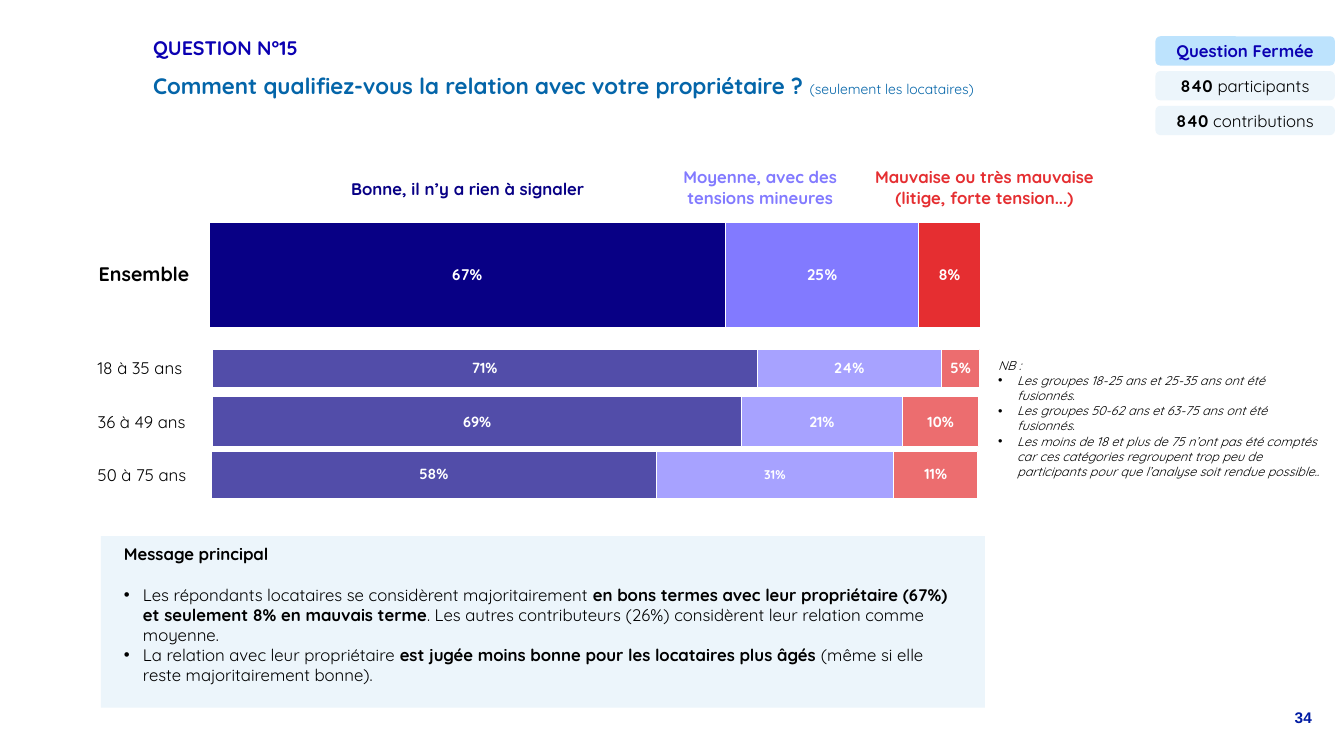
from lxml.etree import SubElement
from pptx import Presentation
from pptx.chart.data import CategoryChartData
from pptx.dml.color import RGBColor
from pptx.enum.chart import XL_CHART_TYPE
from pptx.enum.shapes import MSO_SHAPE
from pptx.enum.text import MSO_ANCHOR, MSO_AUTO_SIZE, PP_ALIGN
from pptx.oxml import parse_xml
from pptx.oxml.ns import nsdecls, qn
from pptx.util import Inches, Pt

NAVY = RGBColor(0x08, 0x00, 0x85)
VIOLET = RGBColor(0x82, 0x7A, 0xFF)
RED = RGBColor(0xE5, 0x2E, 0x31)
INDIGO = RGBColor(0x0B, 0x00, 0xB2)
BLUE = RGBColor(0x04, 0x65, 0xA9)
PAGE_BLUE = RGBColor(0x01, 0x1C, 0xA3)
PALE = RGBColor(0xEC, 0xF5, 0xFB)
SKY = RGBColor(0xBD, 0xE3, 0xFD)
BLACK = RGBColor(0, 0, 0)
WHITE = RGBColor(0xFF, 0xFF, 0xFF)
FONT = "Quicksand"

# Content: a paragraph is a list of (text, bold) runs
TITLE = [("QUESTION N°15", True)]
QUESTION = [("Comment qualifiez-vous la relation avec votre propriétaire ? ", True),
            ("(seulement les locataires)", False)]
BADGES = [
    ([("Question Fermée", True)], SKY, INDIGO),
    ([("840 ", True), ("participants", False)], PALE, BLACK),
    ([("840 ", True), ("contributions", False)], PALE, BLACK),
]
ANSWERS = [  # text, colour, box
    ("Bonne, il n’y a rien à signaler", NAVY, (3.35, 1.72, 2.58, 0.3)),
    ("Moyenne, avec des tensions mineures", VIOLET, (6.38, 1.61, 2.32, 0.5)),
    ("Mauvaise ou très mauvaise (litige, forte tension...)", RED, (8.4, 1.61, 2.73, 0.5)),
]
BARS = [  # values, label sizes, axis maximum, frame, inner plot area
    ((0.67, 0.25, 0.08), (11, 11, 11), 1, (1.91, 1.27, 8.14, 3.07), (0.02, 0.05, 0.94, 0.85)),
    ((0.71, 0.24, 0.05), (10.5, 10.5, 10.5), 1.2, (1.91, 3.03, 9.72, 1.25), (0.02, 0.12, 0.94, 0.76)),
    ((0.58, 0.31, 0.11), (10.5, 9, 10.5), 1.2, (1.91, 4.09, 9.5, 1.24), (0.02, 0.03, 0.96, 0.94)),
    ((0.69, 0.21, 0.1), (10.5, 10.5, 10.5), 1.2, (1.92, 3.53, 9.5, 1.31), (0.02, 0.03, 0.96, 0.94)),
]
ROW_LABELS = [  # text, size, bold, box
    ("Ensemble", 14, True, (0.88, 2.55, 1.12, 0.34)),
    ("18 à 35 ans", 12, False, (0.87, 3.5, 1.12, 0.3)),
    ("36 à 49 ans", 12, False, (0.87, 4.04, 1.12, 0.3)),
    ("50 à 75 ans", 12, False, (0.87, 4.56, 1.12, 0.3)),
]
MESSAGE = [
    [("Message principal", True)],
    [("Les répondants locataires se considèrent majoritairement ", False),
     ("en bons termes avec leur propriétaire (67%) et seulement 8% en mauvais terme", True),
     (". Les autres contributeurs (26%) considèrent leur relation comme moyenne.", False)],
    [("La relation avec leur propriétaire ", False),
     ("est jugée moins bonne pour les locataires plus âgés ", True),
     ("(même si elle reste majoritairement bonne).", False)],
]
NOTES = [[(text, False)] for text in (
    "NB :",
    "Les groupes 18-25 ans et 25-35 ans ont été fusionnés.",
    "Les groupes 50-62 ans et 63-75 ans ont été fusionnés.",
    "Les moins de 18 et plus de 75 n’ont pas été comptés car ces catégories regroupent "
    "trop peu de participants pour que l’analyse soit rendue possible..",
)]

prs = Presentation()
prs.slide_width, prs.slide_height = Inches(13.33), Inches(7.5)
s = prs.slides.add_slide(prs.slide_layouts[6])


def inches(box):
    return [Inches(v) for v in box]


def write(tf, paragraphs, size, color, align=PP_ALIGN.LEFT, italic=None,
          bulleted=False, font=FONT):
    """Fill a text frame; with bulleted, every paragraph but the first gets a bullet."""
    tf.word_wrap = True
    for i, runs in enumerate(paragraphs):
        p = tf.paragraphs[0] if i == 0 else tf.add_paragraph()
        p.alignment = align
        if bulleted and i:
            pPr = p._p.get_or_add_pPr()
            pPr.set("marL", str(Inches(0.19)))
            pPr.set("indent", str(-Inches(0.19)))
            SubElement(pPr, qn("a:buFont")).set("typeface", "Arial")
            SubElement(pPr, qn("a:buChar")).set("char", "•")
        for text, bold in runs:
            r = p.add_run()
            r.text = text
            r.font.name, r.font.size = font, Pt(size)
            r.font.bold, r.font.italic = bold, italic
            r.font.color.rgb = color


def add_text(box, paragraphs, size, color, **options):
    tf = s.shapes.add_textbox(*inches(box)).text_frame
    write(tf, paragraphs, size, color, **options)
    return tf


def add_panel(kind, box, fill):
    sp = s.shapes.add_shape(kind, *inches(box))
    sp.shadow.inherit = False
    sp.fill.solid()
    sp.fill.fore_color.rgb = fill
    sp.line.fill.background()
    return sp


def add_bar(values, sizes, maximum, frame, plot_area):
    data = CategoryChartData(number_format="0%")
    data.categories = ["1"]
    for i, value in enumerate(values, 1):
        data.add_series(f"Series {i}", [value])
    kind = XL_CHART_TYPE.BAR_STACKED_100 if maximum == 1 else XL_CHART_TYPE.BAR_STACKED
    chart = s.shapes.add_chart(kind, *inches(frame), data).chart
    chart.has_legend = chart.has_title = False
    chart.font.name, chart.font.size = "Calibri", Pt(10)
    chart.font.color.rgb = BLACK
    axis = chart.value_axis
    axis.minimum_scale, axis.maximum_scale = 0, maximum
    axis.has_major_gridlines = False
    axis.visible = chart.category_axis.visible = False
    plot = chart.plots[0]
    plot.gap_width, plot.overlap, plot.vary_by_categories = 150, 100, False
    for series, size, color in zip(plot.series, sizes, (NAVY, VIOLET, RED)):
        series.format.fill.solid()
        series.format.fill.fore_color.rgb = color
        series.format.line.color.rgb = WHITE
        series.format.line.width = Pt(0.75)
        labels = series.data_labels
        labels.show_value = True
        labels.number_format, labels.number_format_is_linked = "0%", False
        labels.font.name, labels.font.size = FONT, Pt(size)
        labels.font.bold = True
        labels.font.color.rgb = WHITE

    # Fixed inner plot area and transparent background
    area = chart._chartSpace.find(f"{qn('c:chart')}/{qn('c:plotArea')}")
    for old in area.findall(qn("c:layout")):
        area.remove(old)
    layout = parse_xml(f"<c:layout {nsdecls('c')}><c:manualLayout/></c:layout>")
    settings = [("layoutTarget", "inner"), ("xMode", "edge"), ("yMode", "edge")]
    settings += zip("xywh", plot_area)
    for tag, value in settings:
        SubElement(layout[0], qn(f"c:{tag}")).set("val", str(value))
    area.insert(0, layout)
    area.getparent().addnext(parse_xml(
        f"<c:spPr {nsdecls('c', 'a')}><a:noFill/><a:ln><a:noFill/></a:ln></c:spPr>"))


# Bars, with a veil over the age groups
for bar in BARS:
    add_bar(*bar)
veil = add_panel(MSO_SHAPE.RECTANGLE, (1.85, 3.44, 8.02, 1.53), WHITE)
veil_color = veil._element.spPr.find(f"{qn('a:solidFill')}/{qn('a:srgbClr')}")
SubElement(veil_color, qn("a:alpha")).set("val", "30000")

# Headings
tf = add_text((1.42, 0.34, 11.5, 0.27), [TITLE], 14, INDIGO)
tf.vertical_anchor = MSO_ANCHOR.MIDDLE
tf = add_text((1.42, 0.67, 10.21, 0.39), [QUESTION], 16, BLUE)
tf.vertical_anchor = MSO_ANCHOR.MIDDLE
tf.paragraphs[0].line_spacing = 0.9
tf.paragraphs[0].runs[1].font.size = Pt(10)

# Participation badges
for i, (runs, fill, color) in enumerate(BADGES):
    sp = add_panel(MSO_SHAPE.ROUNDED_RECTANGLE, (11.46, 0.36 + 0.345 * i, 1.78, 0.29), fill)
    write(sp.text_frame, [runs], 12, color, align=PP_ALIGN.CENTER)
    sp.text_frame.vertical_anchor = MSO_ANCHOR.MIDDLE

# Answer and row labels
for text, color, box in ANSWERS:
    add_text(box, [[(text, True)]], 12, color, align=PP_ALIGN.CENTER)
for text, size, bold, box in ROW_LABELS:
    tf = add_text(box, [[(text, bold)]], size, BLACK)
    tf.word_wrap = False
    tf.auto_size = MSO_AUTO_SIZE.SHAPE_TO_FIT_TEXT

# Main message, side notes and page number
add_panel(MSO_SHAPE.RECTANGLE, (1, 5.32, 8.77, 1.7), PALE)
tf = add_text((1.13, 5.34, 8.54, 1.51), MESSAGE, 12, BLACK, bulleted=True)
tf.paragraphs[1].space_before = Pt(15)
add_text((9.8, 3.5, 3.42, 1.46), NOTES, 9, BLACK, italic=True, bulleted=True)
add_text((11.14, 6.98, 1.97, 0.52), [[("34", True)]], 11, PAGE_BLUE,
         align=PP_ALIGN.RIGHT, font="Arial")

prs.save("out.pptx")
